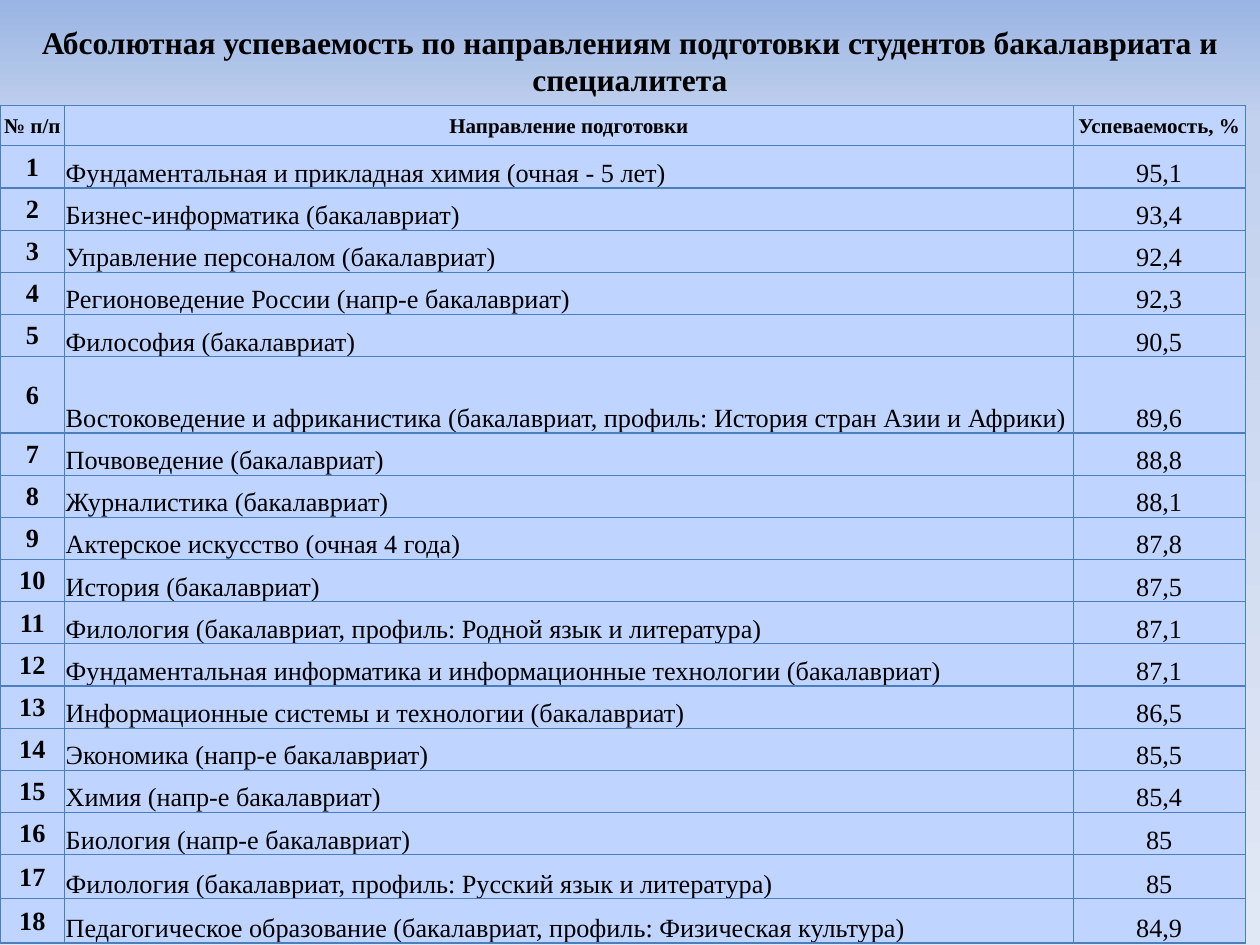
from copy import deepcopy
from dataclasses import dataclass

from lxml.etree import SubElement
from pptx import Presentation
from pptx.dml.color import RGBColor
from pptx.enum.text import MSO_ANCHOR, MSO_AUTO_SIZE, PP_ALIGN
from pptx.oxml.ns import qn
from pptx.util import Cm, Pt


@dataclass(frozen=True)
class Theme:
    font: str = "Times New Roman"
    ink: str = "000000"
    cell: str = "BFD4FF"
    border: str = "4B7EBC"
    border_width: float = 0.75
    background: tuple = ((0, "9AB5E4"), (0.13, "C2D1ED"), (1, "E1E8F5"))
    title_size: int = 18
    header_size: int = 12
    body_size: int = 15


THEME = Theme()
TITLE = ("Абсолютная успеваемость по направлениям подготовки "
         "студентов бакалавриата и специалитета")
HEADERS = ("№ п/п", "Направление подготовки", "Успеваемость, %")
PROGRAMMES = (
    ("Фундаментальная и прикладная химия (очная - 5 лет)", "95,1"),
    ("Бизнес-информатика (бакалавриат)", "93,4"),
    ("Управление персоналом (бакалавриат)", "92,4"),
    ("Регионоведение России (напр-е бакалавриат)", "92,3"),
    ("Философия (бакалавриат)", "90,5"),
    ("Востоковедение и африканистика (бакалавриат, профиль: "
     "История стран Азии и Африки)", "89,6"),
    ("Почвоведение (бакалавриат)", "88,8"),
    ("Журналистика (бакалавриат)", "88,1"),
    ("Актерское искусство (очная 4 года)", "87,8"),
    ("История (бакалавриат)", "87,5"),
    ("Филология (бакалавриат, профиль: Родной язык и литература)", "87,1"),
    ("Фундаментальная информатика и информационные технологии (бакалавриат)", "87,1"),
    ("Информационные системы и технологии (бакалавриат)", "86,5"),
    ("Экономика (напр-е бакалавриат)", "85,5"),
    ("Химия (напр-е бакалавриат)", "85,4"),
    ("Биология (напр-е бакалавриат)", "85"),
    ("Филология (бакалавриат, профиль: Русский язык и литература)", "85"),
    ("Педагогическое образование (бакалавриат, профиль: Физическая культура)", "84,9"),
)
# Row heights in cm: header, usual rows, one tall row, two slightly taller rows
ROW_HEIGHTS = [0.82] + [0.85] * 5 + [1.54] + [0.85] * 10 + [0.89] * 2
COLUMN_SHARES = (0.052, 0.81, 0.138)


def style_paragraph(para, size, bold, align):
    para.alignment = align
    para.font.name = THEME.font
    para.font.size = Pt(size)
    para.font.bold = bold
    para.font.color.rgb = RGBColor.from_string(THEME.ink)


def paint_background(page):
    fill = page.background.fill
    fill.gradient()
    fill.gradient_angle = 270
    stop_list = page.background._cSld.find(".//" + qn("a:gsLst"))
    stop_list.append(deepcopy(stop_list[-1]))
    for stop, (position, colour) in zip(fill.gradient_stops, THEME.background):
        stop.position = position
        stop.color.rgb = RGBColor.from_string(colour)


def place_title(page, left, top, width, height):
    title = page.shapes.title
    title.left, title.top, title.width, title.height = left, top, width, height
    frame = title.text_frame
    frame.text = TITLE
    frame.word_wrap = True
    frame.auto_size = MSO_AUTO_SIZE.NONE
    frame.vertical_anchor = MSO_ANCHOR.TOP
    style_paragraph(frame.paragraphs[0], THEME.title_size, True, PP_ALIGN.CENTER)


def draw_borders(cell):
    properties = cell._tc.get_or_add_tcPr()
    for side in ("L", "R", "T", "B"):
        line = SubElement(properties, qn(f"a:ln{side}"), w=str(Pt(THEME.border_width)))
        solid = SubElement(line, qn("a:solidFill"))
        SubElement(solid, qn("a:srgbClr"), val=THEME.border)


def fill_cell(cell, text, size, bold, align, anchor):
    draw_borders(cell)
    cell.fill.solid()
    cell.fill.fore_color.rgb = RGBColor.from_string(THEME.cell)
    cell.margin_left = cell.margin_right = cell.margin_top = Cm(0.02)
    cell.margin_bottom = 0
    cell.vertical_anchor = anchor
    cell.text = text
    style_paragraph(cell.text_frame.paragraphs[0], size, bold, align)


def place_results(page, left, top, width, height):
    rows = [HEADERS] + [(str(number), *programme)
                        for number, programme in enumerate(PROGRAMMES, 1)]
    table = page.shapes.add_table(len(rows), len(HEADERS), left, top, width, height).table
    for column, share in zip(table.columns, COLUMN_SHARES):
        column.width = int(width * share)
    for row, row_height in zip(table.rows, ROW_HEIGHTS):
        row.height = Cm(row_height)

    for row_index, values in enumerate(rows):
        header = row_index == 0
        size = THEME.header_size if header else THEME.body_size
        for column_index, text in enumerate(values):
            strong = header or column_index == 0
            align = PP_ALIGN.LEFT if column_index == 1 and not header else PP_ALIGN.CENTER
            anchor = MSO_ANCHOR.MIDDLE if strong else MSO_ANCHOR.BOTTOM
            fill_cell(table.cell(row_index, column_index), text, size, strong, align, anchor)


def main():
    deck = Presentation()
    deck.slide_width, deck.slide_height = Cm(25.4), Cm(19.05)
    page = deck.slides.add_slide(deck.slide_layouts[5])
    paint_background(page)
    place_title(page, 0, Cm(0.33), deck.slide_width, Cm(1.8))
    place_results(page, 0, Cm(2.12), Cm(25.1), Cm(sum(ROW_HEIGHTS)))
    deck.save("out.pptx")


if __name__ == "__main__":
    main()
